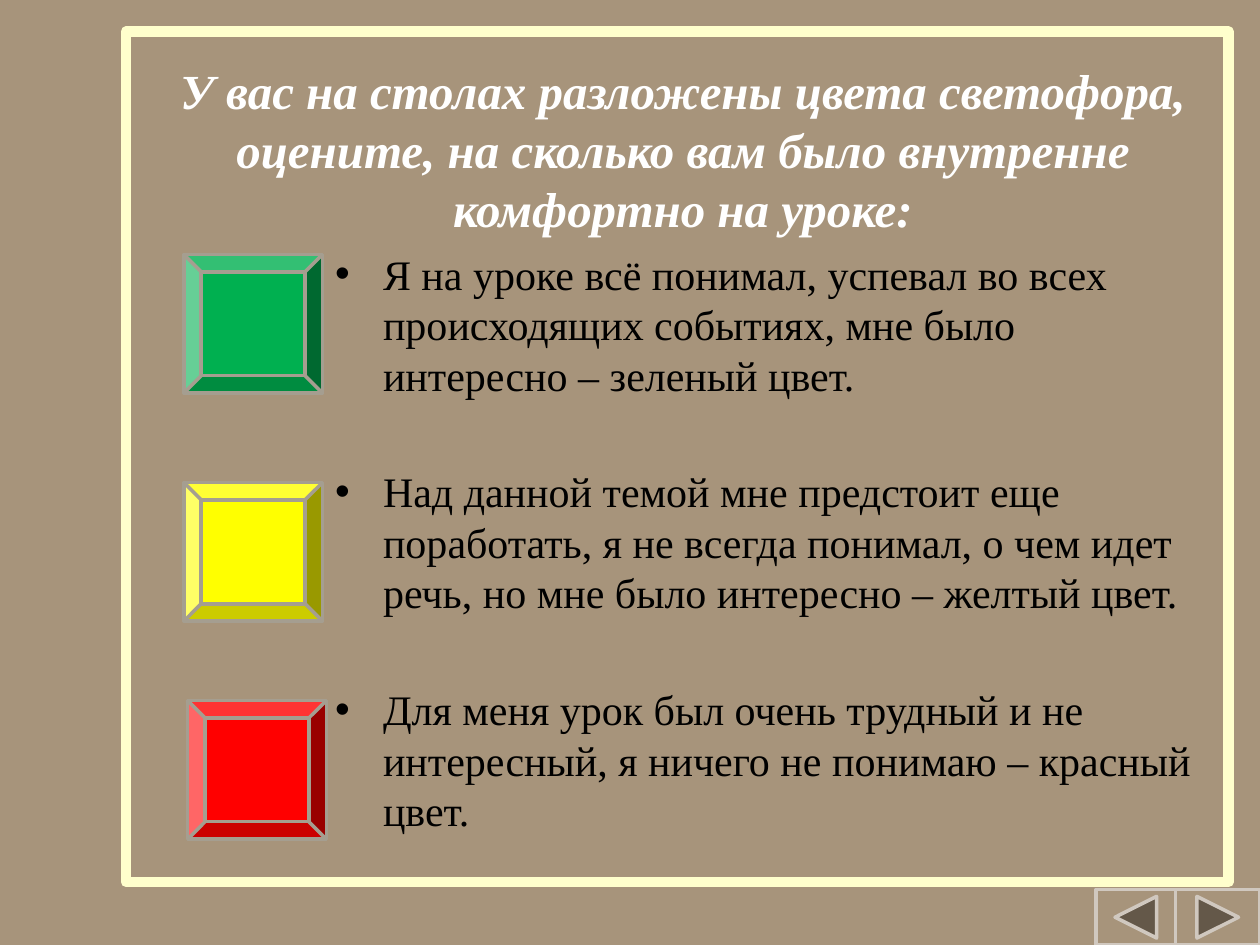
from pptx import Presentation
from pptx.dml.color import RGBColor
from pptx.enum.shapes import MSO_SHAPE as Shape
from pptx.enum.text import MSO_ANCHOR as Anchor, MSO_AUTO_SIZE as Fit, PP_ALIGN as Align
from pptx.oxml.ns import qn
from pptx.util import Inches, Pt

FONT = "Times New Roman"
TAN = RGBColor(0xA7, 0x94, 0x7B)
CREAM = RGBColor(0xFF, 0xFF, 0xCC)
WHITE = RGBColor(0xFF, 0xFF, 0xFF)
BLACK = RGBColor(0, 0, 0)
GREEN = RGBColor(0, 0xB0, 0x50)
YELLOW = RGBColor(0xFF, 0xFF, 0)
RED = RGBColor(0xFF, 0, 0)
EDGE = RGBColor(0xA5, 0x9E, 0x90)
PALE = RGBColor(0xD0, 0xC8, 0xBF)

TITLE = ("У вас на столах разложены цвета светофора, оцените, "
         "на сколько вам было внутренне комфортно на уроке:")
ITEMS = [
    "Я на уроке всё понимал, успевал во всех происходящих событиях, "
    "мне было интересно – зеленый цвет.",
    "Над данной темой мне предстоит еще поработать, я не всегда понимал, "
    "о чем идет речь, но мне было интересно – желтый цвет.",
    "Для меня урок был очень трудный и не интересный, "
    "я ничего не понимаю – красный цвет.",
]


def place(shape, box):
    shape.left, shape.top, shape.width, shape.height = map(Inches, box)


def write(par, text, size, color, align=Align.LEFT, bold=False, italic=False, before=0):
    par.alignment = align
    par.space_before = Pt(before)
    run = par.add_run()
    run.text = text
    font = run.font
    font.name, font.size, font.bold, font.italic = FONT, Pt(size), bold, italic
    font.color.rgb = color


def draw(slide, kind, box, fill, line, width=2):
    shape = slide.shapes.add_shape(kind, *map(Inches, box))
    shape.shadow.inherit = False
    shape.fill.solid()
    shape.fill.fore_color.rgb = fill
    shape.line.color.rgb = line
    shape.line.width = Pt(width)
    return shape


def add_frame(slide, box):
    frame = draw(slide, Shape.RECTANGLE, box, TAN, CREAM, 6)
    # Send behind the placeholders
    frame.element.getparent().insert(2, frame.element)


def add_title(slide, box):
    title = slide.shapes.title
    place(title, box)
    frame = title.text_frame
    frame.auto_size = Fit.NONE
    frame.vertical_anchor = Anchor.MIDDLE
    write(frame.paragraphs[0], TITLE, 28, WHITE, Align.CENTER, bold=True, italic=True)


def add_list(slide, box):
    body = slide.placeholders[1]
    place(body, box)
    frame = body.text_frame
    frame.auto_size = Fit.NONE
    for i, text in enumerate(ITEMS):
        par = frame.add_paragraph() if i else frame.paragraphs[0]
        props = par._p.get_or_add_pPr()
        props.set("marL", str(Inches(0.38)))
        props.set("indent", str(Inches(-0.38)))
        bullet = props.makeelement(qn("a:buChar"), {"char": "•"})
        props.append(bullet)
        write(par, text, 24, BLACK, before=38 if i else 0)


def add_lights(slide, size):
    spots = [(1.46, 2.02, GREEN), (1.46, 3.83, YELLOW), (1.49, 5.56, RED)]
    for left, top, color in spots:
        draw(slide, Shape.BEVEL, (left, top, size, size), color, EDGE)


def add_nav(slide, box):
    left, top, width, height = box
    back = 0.63
    draw(slide, Shape.ACTION_BUTTON_FORWARD_OR_NEXT,
         (left + back, top, width - back, height), TAN, PALE)
    draw(slide, Shape.ACTION_BUTTON_BACK_OR_PREVIOUS,
         (left, top, back, height), TAN, PALE)


def main():
    deck = Presentation()
    deck.slide_width, deck.slide_height = Inches(10), Inches(7.5)
    slide = deck.slides.add_slide(deck.slide_layouts[1])
    back = slide.background.fill
    back.solid()
    back.fore_color.rgb = TAN

    add_frame(slide, (1, 0.25, 8.75, 6.75))
    add_title(slide, (1.17, 0.42, 8.5, 1.52))
    add_list(slide, (2.56, 1.92, 7.11, 4.98))
    add_lights(slide, 1.1)
    add_nav(slide, (8.7, 7.06, 1.3, 0.44))
    deck.save("out.pptx")


if __name__ == "__main__":
    main()
